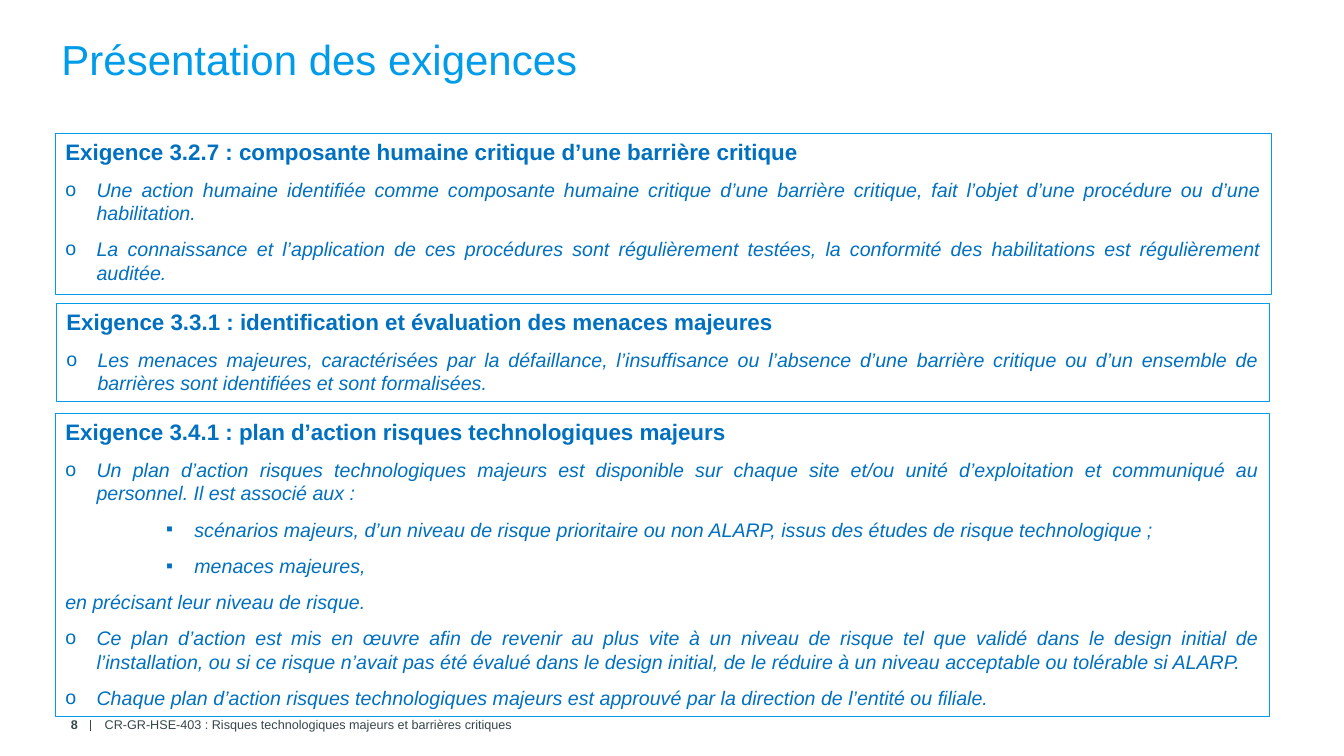
from lxml import etree
from pptx import Presentation, util as u
from pptx.dml.color import RGBColor
from pptx.enum import shapes, text
from pptx.oxml.ns import qn

SKY, BLUE, SLATE = "009CEA", "0070C0", "374649"
LEFT, JUSTIFY, RIGHT = text.PP_ALIGN.LEFT, text.PP_ALIGN.JUSTIFY, text.PP_ALIGN.RIGHT

# paragraph style: (bullet character, left margin, hanging indent)
STYLES = {
    "plain": None,
    "item": ("o", 0.31, 0.31),
    "subitem": ("▪", 1.28, 0.28),
}

REQUIREMENTS = [
    ((0.55, 1.32, 12.06, 1.6),
     "Exigence 3.2.7 : composante humaine critique d’une barrière critique",
     [("item", "Une action humaine identifiée comme composante humaine critique d’une barrière "
               "critique, fait l’objet d’une procédure ou d’une habilitation."),
      ("item", "La connaissance et l’application de ces procédures sont régulièrement testées, "
               "la conformité des habilitations est régulièrement auditée.")]),
    ((0.56, 3.01, 12.03, 0.97),
     "Exigence 3.3.1 : identification et évaluation des menaces majeures",
     [("item", "Les menaces majeures, caractérisées par la défaillance, l’insuffisance ou "
               "l’absence d’une barrière critique ou d’un ensemble de barrières sont "
               "identifiées et sont formalisées.")]),
    ((0.55, 4.1, 12.04, 3.01),
     "Exigence 3.4.1 : plan d’action risques technologiques majeurs",
     [("item", "Un plan d’action risques technologiques majeurs est disponible sur chaque site "
               "et/ou unité d’exploitation et communiqué au personnel. Il est associé aux :"),
      ("subitem", "scénarios majeurs, d’un niveau de risque prioritaire ou non ALARP, issus "
                  "des études de risque technologique ;"),
      ("subitem", "menaces majeures,"),
      ("plain", "en précisant leur niveau de risque."),
      ("item", "Ce plan d’action est mis en œuvre afin de revenir au plus vite à un niveau de "
               "risque tel que validé dans le design initial de l’installation, ou si ce risque "
               "n’avait pas été évalué dans le design initial, de le réduire à un niveau "
               "acceptable ou tolérable si ALARP."),
      ("item", "Chaque plan d’action risques technologiques majeurs est approuvé par la "
               "direction de l’entité ou filiale.")]),
]


def color(value):
    return RGBColor.from_string(value)


def inches(box):
    return [u.Inches(length) for length in box]


def write(para, words, size, ink, align=LEFT, bold=False, italic=False):
    para.text = words
    para.alignment = align
    font = para.font
    font.name, font.size, font.bold, font.italic = "Arial", u.Pt(size), bold, italic
    font.color.rgb = color(ink)


def add_bullet(para, character, margin, hanging):
    props = para._p.get_or_add_pPr()
    props.set("marL", str(u.Inches(margin)))
    props.set("indent", str(-u.Inches(hanging)))
    etree.SubElement(props, qn("a:buFont")).set("typeface", "Arial")
    etree.SubElement(props, qn("a:buChar")).set("char", character)


def place_title(page, box, words):
    title = page.shapes.title
    title.left, title.top, title.width, title.height = inches(box)
    frame = title.text_frame
    frame.auto_size = text.MSO_AUTO_SIZE.NONE
    frame.vertical_anchor = text.MSO_ANCHOR.MIDDLE
    write(frame.paragraphs[0], words, 30, SKY)


def add_requirement(page, box, heading, entries):
    panel = page.shapes.add_shape(shapes.MSO_SHAPE.RECTANGLE, *inches(box))
    panel.shadow.inherit = False
    panel.fill.background()
    panel.line.color.rgb = color(SKY)
    panel.line.width = u.Pt(0.75)
    frame = panel.text_frame
    frame.word_wrap = True
    frame.vertical_anchor = text.MSO_ANCHOR.TOP
    para = frame.paragraphs[0]
    para.space_after = u.Pt(3)
    write(para, heading, 16, BLUE, JUSTIFY, bold=True)
    for style, words in entries:
        para = frame.add_paragraph()
        para.space_before, para.space_after = u.Pt(6), u.Pt(3)
        if STYLES[style]:
            add_bullet(para, *STYLES[style])
        write(para, words, 14, BLUE, JUSTIFY, italic=True)


def add_label(page, box, words, align=LEFT, bold=False):
    frame = page.shapes.add_textbox(*inches(box)).text_frame
    frame.word_wrap = True
    frame.vertical_anchor = text.MSO_ANCHOR.MIDDLE
    write(frame.paragraphs[0], words, 9, SLATE, align, bold)


def add_footer(page, box, number, words):
    """Place the page number, a short divider and the document name in a row."""
    left, top, width, height = box
    add_label(page, (left, top, 0.63, height), number, RIGHT, bold=True)
    add_label(page, (left + 0.7, top, width - 0.7, height), words)
    x = left + 0.66
    divider = page.shapes.add_connector(
        shapes.MSO_CONNECTOR.STRAIGHT, *inches((x, top + 0.09, x, top + 0.2)))
    divider.line.color.rgb = color(SLATE)
    divider.line.width = u.Pt(1)
    etree.SubElement(divider._element.spPr, qn("a:effectLst"))


def main():
    deck = Presentation()
    deck.slide_width, deck.slide_height = inches((13.33, 7.5))
    page = deck.slides.add_slide(deck.slide_layouts[5])
    place_title(page, (0.51, 0.27, 10.63, 0.63), "Présentation des exigences")
    add_footer(page, (0.24, 7.05, 12.35, 0.28), "8",
               "CR-GR-HSE-403 : Risques technologiques majeurs et barrières critiques")
    for box, heading, entries in REQUIREMENTS:
        add_requirement(page, box, heading, entries)
    deck.save("out.pptx")


if __name__ == "__main__":
    main()
